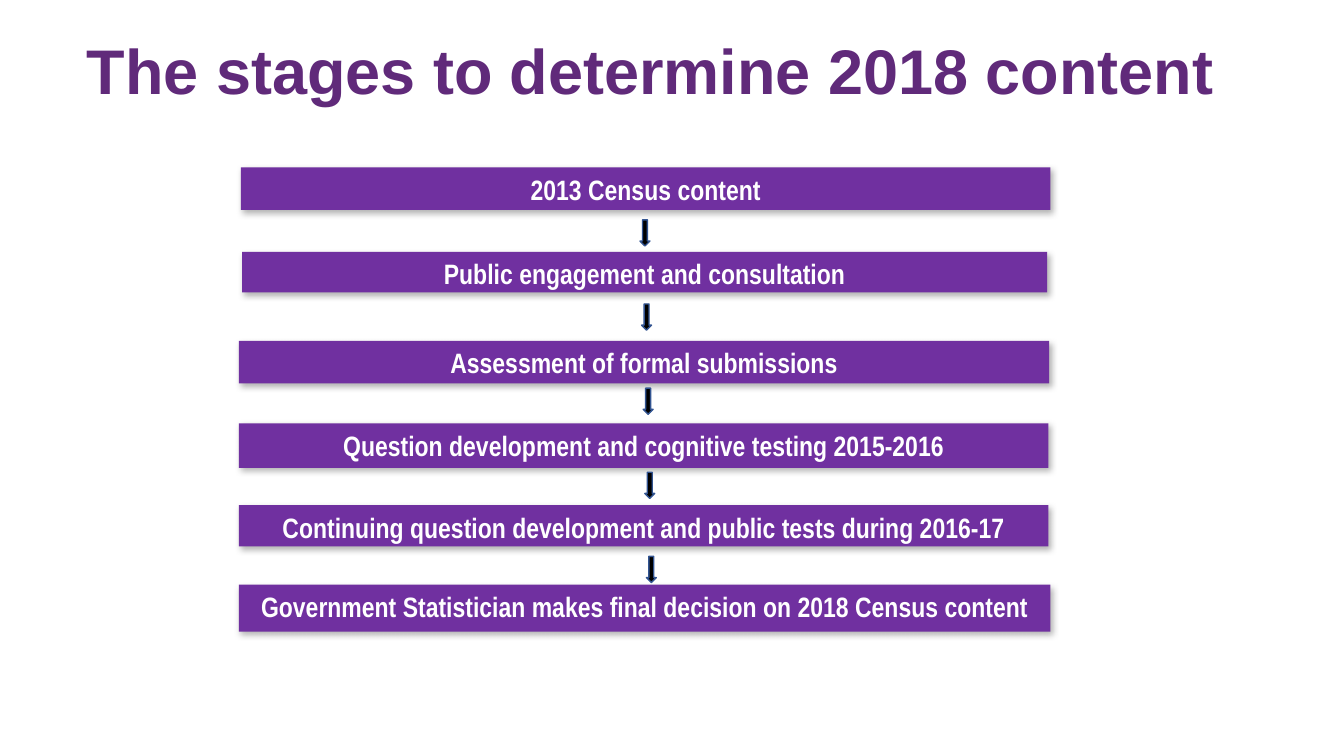
"""Build the slide showing the stages that determine 2018 census content."""
from lxml.etree import SubElement
from pptx import Presentation
from pptx.dml.color import RGBColor
from pptx.enum.shapes import MSO_SHAPE
from pptx.enum.text import MSO_ANCHOR, PP_ALIGN
from pptx.oxml.ns import qn
from pptx.util import Cm, Pt

TITLE = "The stages to determine 2018 content"
STAGES = [
    ("2013 Census content", 6.07, 4.22, 20.4, 1.07),
    ("Public engagement and consultation", 6.1, 6.35, 20.29, 1.02),
    ("Assessment of formal submissions", 6.02, 8.59, 20.42, 1.07),
    ("Question development and cognitive testing 2015-2016", 6.02, 10.67, 20.4, 1.12),
    ("Continuing question development and public tests during 2016-17", 6.02, 12.73, 20.4, 1.04),
    ("Government Statistician makes final decision on 2018 Census content", 6.02, 14.73, 20.45, 1.19),
]
ARROW_LEFT, ARROW_TOP = 16.13, 5.54
ARROW_SHIFT, ARROW_STEP = 0.04, 2.12
ARROW_WIDTH, ARROW_HEIGHT = 0.25, 0.66


def colour(value):
    return RGBColor.from_string(value)


def set_font(paragraph, name, size, value):
    font = paragraph.font
    font.name, font.size, font.bold = name, Pt(size), True
    font.color.rgb = colour(value)


def add_filled(slide, kind, box, fill):
    shape = slide.shapes.add_shape(kind, *map(Cm, box))
    shape.shadow.inherit = False
    shape.fill.solid()
    shape.fill.fore_color.rgb = colour(fill)
    return shape


def cast_shadow(shape):
    effects = shape.fill._xPr.find(qn("a:effectLst"))
    shadow = SubElement(effects, qn("a:outerShdw"), blurRad=str(Pt(4.5)), dist=str(Pt(2.6)),
                        dir="3180000", algn="ctr", rotWithShape="0")
    black = SubElement(shadow, qn("a:srgbClr"), val="000000")
    SubElement(black, qn("a:alpha"), val="30000")


def add_stage(slide, label, *box):
    bar = add_filled(slide, MSO_SHAPE.RECTANGLE, box, "7030A0")
    bar.line.fill.background()
    cast_shadow(bar)
    frame = bar.text_frame
    frame.word_wrap = True
    frame.vertical_anchor = MSO_ANCHOR.TOP
    paragraph = frame.paragraphs[0]
    paragraph.text = label
    paragraph.alignment = PP_ALIGN.CENTER
    set_font(paragraph, "Arial Narrow", 20, "FFFFFF")


def add_arrow(slide, step):
    box = (ARROW_LEFT + step * ARROW_SHIFT, ARROW_TOP + step * ARROW_STEP, ARROW_WIDTH, ARROW_HEIGHT)
    arrow = add_filled(slide, MSO_SHAPE.DOWN_ARROW, box, "000000")
    arrow.line.color.rgb = colour("325491")
    arrow.line.width = Pt(1)


def add_title(slide):
    title = slide.shapes.title
    title.left, title.top, title.width, title.height = map(Cm, (1.93, 0.03, 29.21, 3.68))
    frame = title.text_frame
    frame.word_wrap = True
    frame.vertical_anchor = MSO_ANCHOR.MIDDLE
    paragraph = frame.paragraphs[0]
    paragraph.text = TITLE
    paragraph.alignment = PP_ALIGN.LEFT
    paragraph.line_spacing = 0.9
    set_font(paragraph, "Arial", 45, "602A7A")


def main():
    deck = Presentation()
    deck.slide_width, deck.slide_height = Cm(33.87), Cm(19.05)
    slide = deck.slides.add_slide(deck.slide_layouts[5])
    add_title(slide)
    for stage in STAGES:
        add_stage(slide, *stage)
    for step in range(len(STAGES) - 1):
        add_arrow(slide, step)
    deck.save("out.pptx")


if __name__ == "__main__":
    main()
